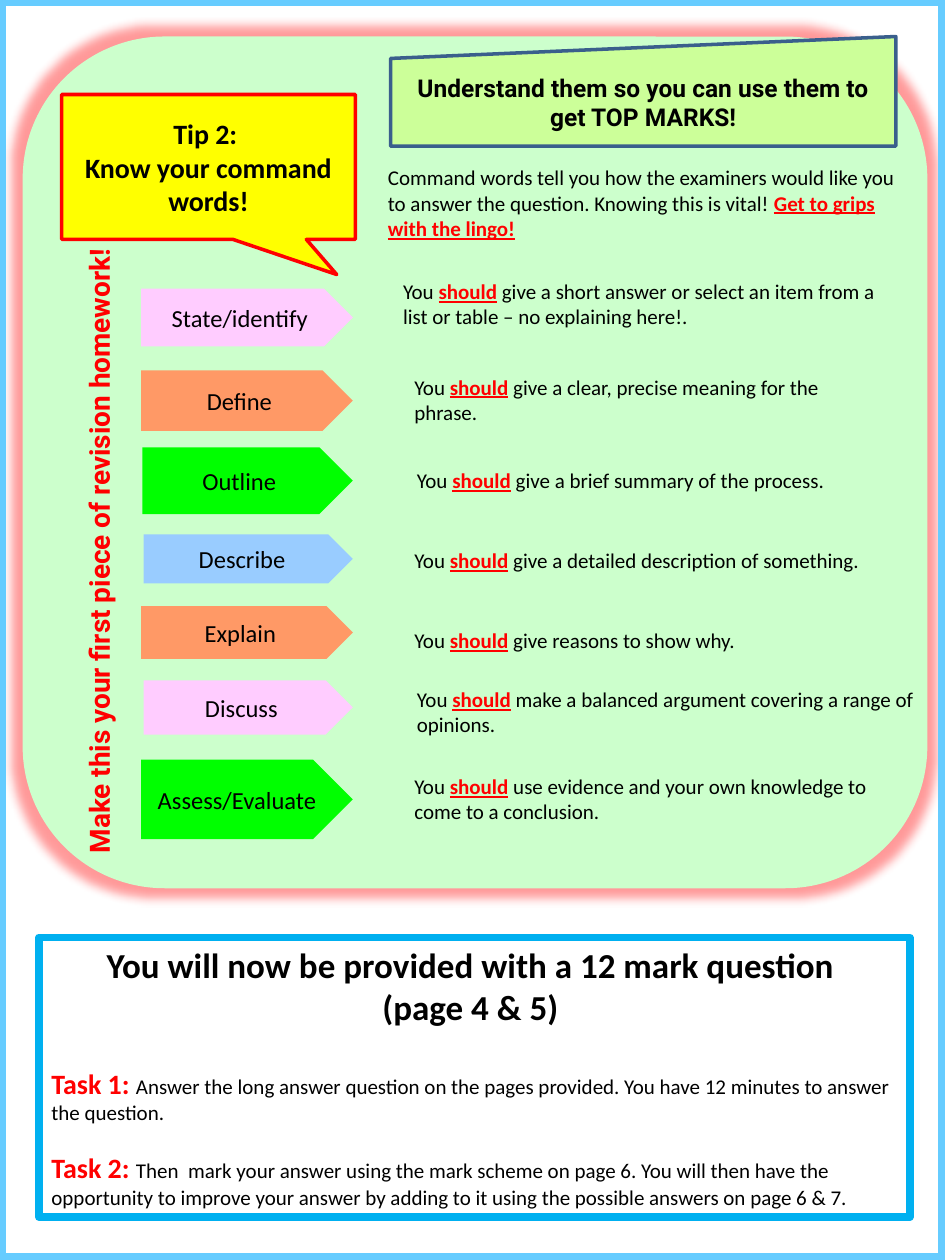
"""Build the command words revision slide."""
from lxml import etree
from pptx import Presentation
from pptx.dml.color import RGBColor
from pptx.enum.shapes import MSO_SHAPE
from pptx.enum.text import MSO_ANCHOR, MSO_AUTO_SIZE, PP_ALIGN
from pptx.oxml.ns import qn
from pptx.util import Inches, Pt

COLORS = {
    "black": "000000", "red": "FF0000", "yellow": "FFFF00", "mint": "CCFFCC",
    "lime": "CCFF99", "navy": "3A5F8C", "pink": "FFCCFF", "orange": "FF9966",
    "green": "00FF00", "blue": "99CCFF", "sky": "66CCFF", "cyan": "00B0F0",
}
KEY = {"color": "red", "bold": True, "underline": True}
TASK = {"size": 16, "color": "red", "bold": True}
HEAD = {"size": 20, "bold": True}

TIP = ["Tip 2: ", "Know your command words!"]
BANNER = "Understand them so you can use them to get TOP MARKS!"
HOMEWORK = "Make this your first piece of revision homework!"
INTRO = [
    ("Command words tell you how the examiners would like you to answer "
     "the question. Knowing this is vital! ", {}),
    ("Get to grips with the lingo!", KEY),
]
# word, fill, (left, top, height) of the arrow, meaning, (left, top, width, height) of its text
COMMANDS = [
    ("State/identify", "pink", (1.12, 2.29, 0.46),
     "give a short answer or select an item from a list or table – no explaining here!.",
     (3.1, 2.16, 3.95, 0.5)),
    ("Define", "orange", (1.12, 2.94, 0.48),
     "give a clear, precise meaning for the phrase.", (3.19, 2.92, 3.78, 0.5)),
    ("Outline", "green", (1.13, 3.55, 0.53),
     "give a brief summary of the process.", (3.21, 3.66, 3.96, 0.3)),
    ("Describe", "blue", (1.14, 4.24, 0.39),
     "give a detailed description of something.", (3.19, 4.3, 4.19, 0.3)),
    ("Explain", "orange", (1.12, 4.81, 0.42),
     "give reasons to show why.", (3.19, 4.93, 4.19, 0.3)),
    ("Discuss", "pink", (1.14, 5.4, 0.43),
     "make a balanced argument covering a range of opinions.", (3.21, 5.4, 4.19, 0.5)),
    ("Assess/Evaluate", "green", (1.12, 6.03, 0.63),
     "use evidence and your own knowledge to come to a conclusion.",
     (3.19, 6.09, 4.19, 0.5)),
]
ARROW_TIP = 2.8
QUESTION = ["You will now be provided with a 12 mark question ", "(page 4 & 5) "]
TASKS = [
    ("Task 1: ", "Answer the long answer question on the pages provided. "
     "You have 12 minutes to answer the question.", 22),
    ("Task 2: ", "Then  mark your answer using the mark scheme on page 6. "
     "You will then have the opportunity to improve your answer by adding to it "
     "using the possible answers on page 6 & 7.", 14.6),
]

prs = Presentation()
prs.slide_width, prs.slide_height = Inches(7.5), Inches(10)
s = prs.slides.add_slide(prs.slide_layouts[6])


def rgb(name):
    return RGBColor.from_string(COLORS[name])


def add_run(p, text, size=12, color="black", bold=False, underline=False, font="Calibri"):
    r = p.add_run()
    r.text = text
    r.font.size, r.font.name = Pt(size), font
    r.font.bold, r.font.underline = bold, underline
    r.font.color.rgb = rgb(color)


def add_paragraph(tf, runs, align=PP_ALIGN.LEFT, before=0):
    p = tf.add_paragraph() if tf.paragraphs[0].runs else tf.paragraphs[0]
    p.alignment, p.space_before = align, Pt(before)
    for text, style in runs:
        add_run(p, text, **style)


def add_centred(sp, lines, **style):
    for line in lines:
        add_paragraph(sp.text_frame, [(line, style)], PP_ALIGN.CENTER)


def add_shape(kind, box, fill=None, line=None, width=2, adjust=()):
    sp = s.shapes.add_shape(kind, *map(Inches, box))
    sp.shadow.inherit = False
    for i, value in enumerate(adjust):
        sp.adjustments[i] = value
    if fill:
        sp.fill.solid()
        sp.fill.fore_color.rgb = rgb(fill)
    else:
        sp.fill.background()
    if line:
        sp.line.color.rgb, sp.line.width = rgb(line), Pt(width)
    else:
        sp.line.fill.background()
    sp.text_frame.word_wrap = True
    sp.text_frame.vertical_anchor = MSO_ANCHOR.MIDDLE
    return sp


def add_textbox(box):
    sp = s.shapes.add_textbox(*map(Inches, box))
    sp.text_frame.word_wrap = True
    sp.text_frame.auto_size = MSO_AUTO_SIZE.SHAPE_TO_FIT_TEXT
    return sp


def add_glow(sp, color, radius, alpha):
    effects = sp._element.spPr.find(qn("a:effectLst"))
    glow = etree.SubElement(effects, qn("a:glow"), rad=str(Inches(radius)))
    clr = etree.SubElement(glow, qn("a:srgbClr"), val=COLORS[color])
    etree.SubElement(clr, qn("a:alpha"), val=str(alpha * 1000))


panel = add_shape(MSO_SHAPE.ROUNDED_RECTANGLE, (0.18, 0.29, 7.18, 6.76), "mint")
add_glow(panel, "red", 0.15, 40)

tip = add_shape(MSO_SHAPE.RECTANGULAR_CALLOUT, (0.49, 0.75, 2.33, 1.15),
                "yellow", "red", adjust=(0.437, 0.743))
add_centred(tip, TIP, size=16, bold=True)

add_paragraph(add_textbox((2.98, 1.26, 4.31, 0.71)).text_frame, INTRO)

banner = add_shape(MSO_SHAPE.FLOWCHART_MANUAL_INPUT, (3.1, 0.29, 4.01, 0.87), "lime", "navy")
add_centred(banner, [BANNER], size=14, bold=True, font="Roboto")

homework = add_textbox((-1.97, 4.19, 5.51, 0.37))
homework.rotation = 270
add_centred(homework, [HOMEWORK], size=16, color="red", bold=True, font="Roboto")

for word, fill, (left, top, height), meaning, box in COMMANDS:
    arrow = add_shape(MSO_SHAPE.PENTAGON, (left, top, ARROW_TIP - left, height), fill)
    add_centred(arrow, [word], size=14)
    add_paragraph(add_textbox(box).text_frame,
                  [("You ", {}), ("should", KEY), (f" {meaning}", {})])

add_shape(MSO_SHAPE.FRAME, (0, 0, 7.5, 10), "sky", "sky", adjust=(0.005,))

question = add_shape(MSO_SHAPE.RECTANGLE, (0.31, 7.44, 6.91, 2.22), line="cyan", width=4.5)
question.text_frame.vertical_anchor = MSO_ANCHOR.TOP
question.text_frame.auto_size = MSO_AUTO_SIZE.SHAPE_TO_FIT_TEXT
add_centred(question, QUESTION, **HEAD)
for label, text, before in TASKS:
    add_paragraph(question.text_frame, [(label, TASK), (text, {})], before=before)

prs.save("out.pptx")
